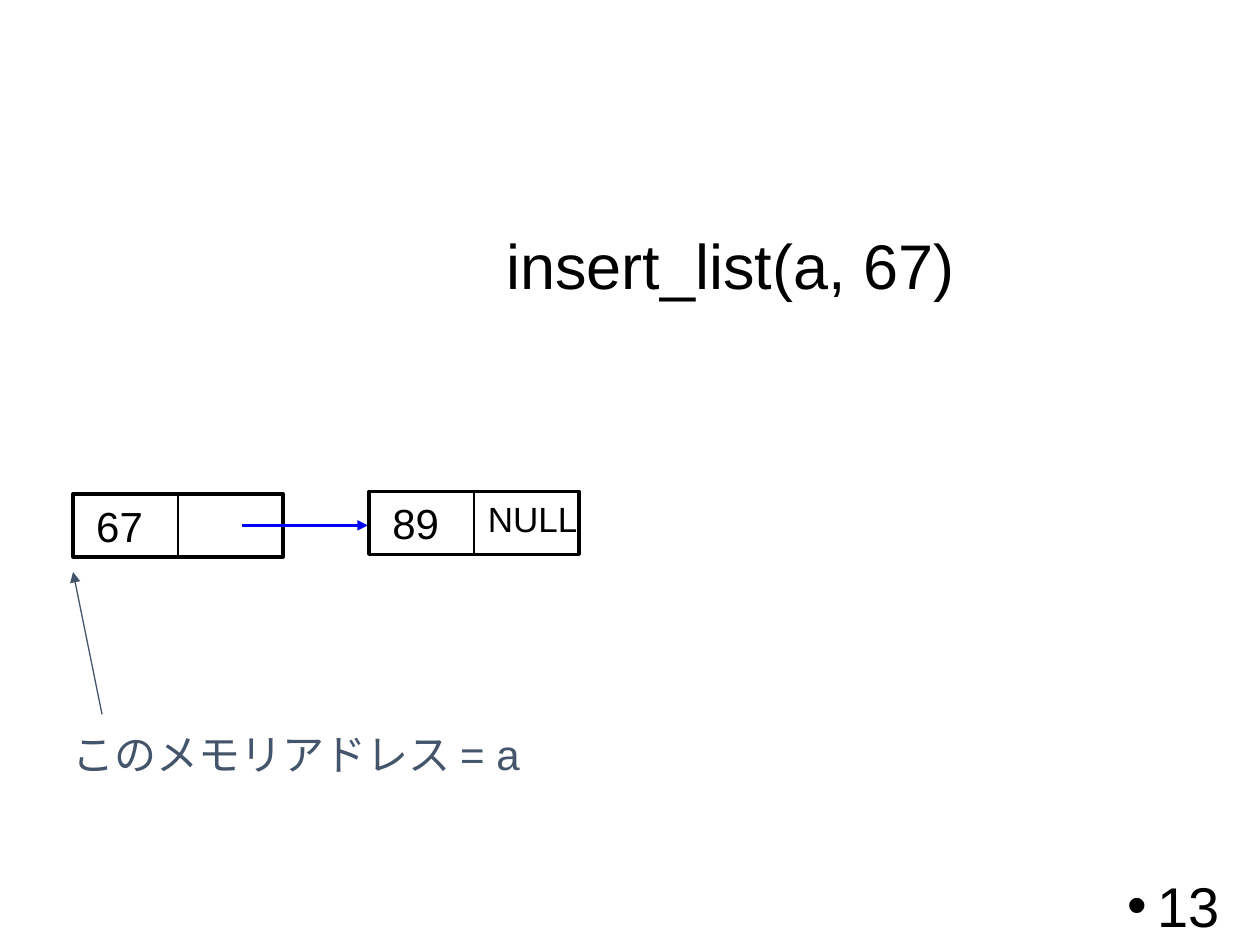
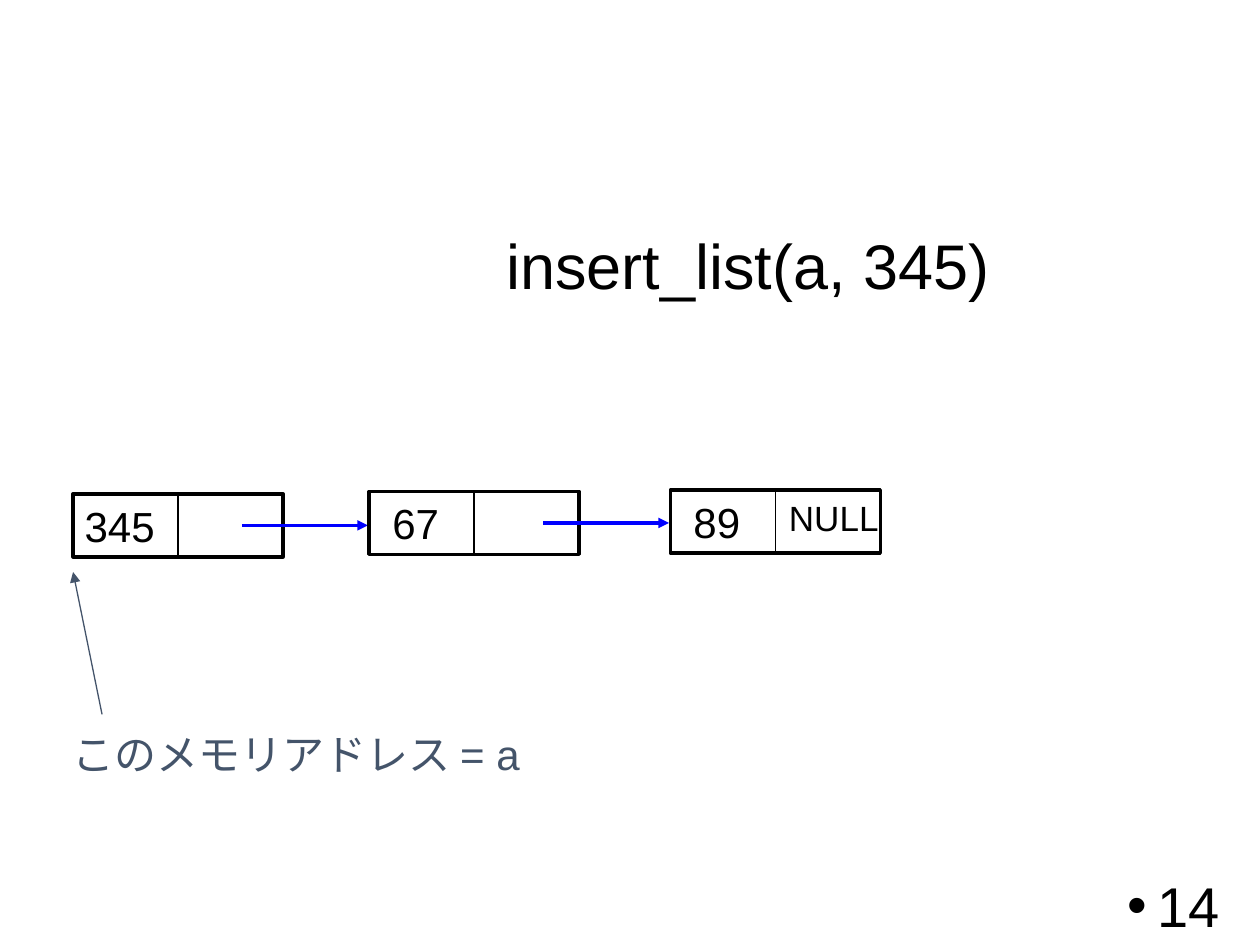
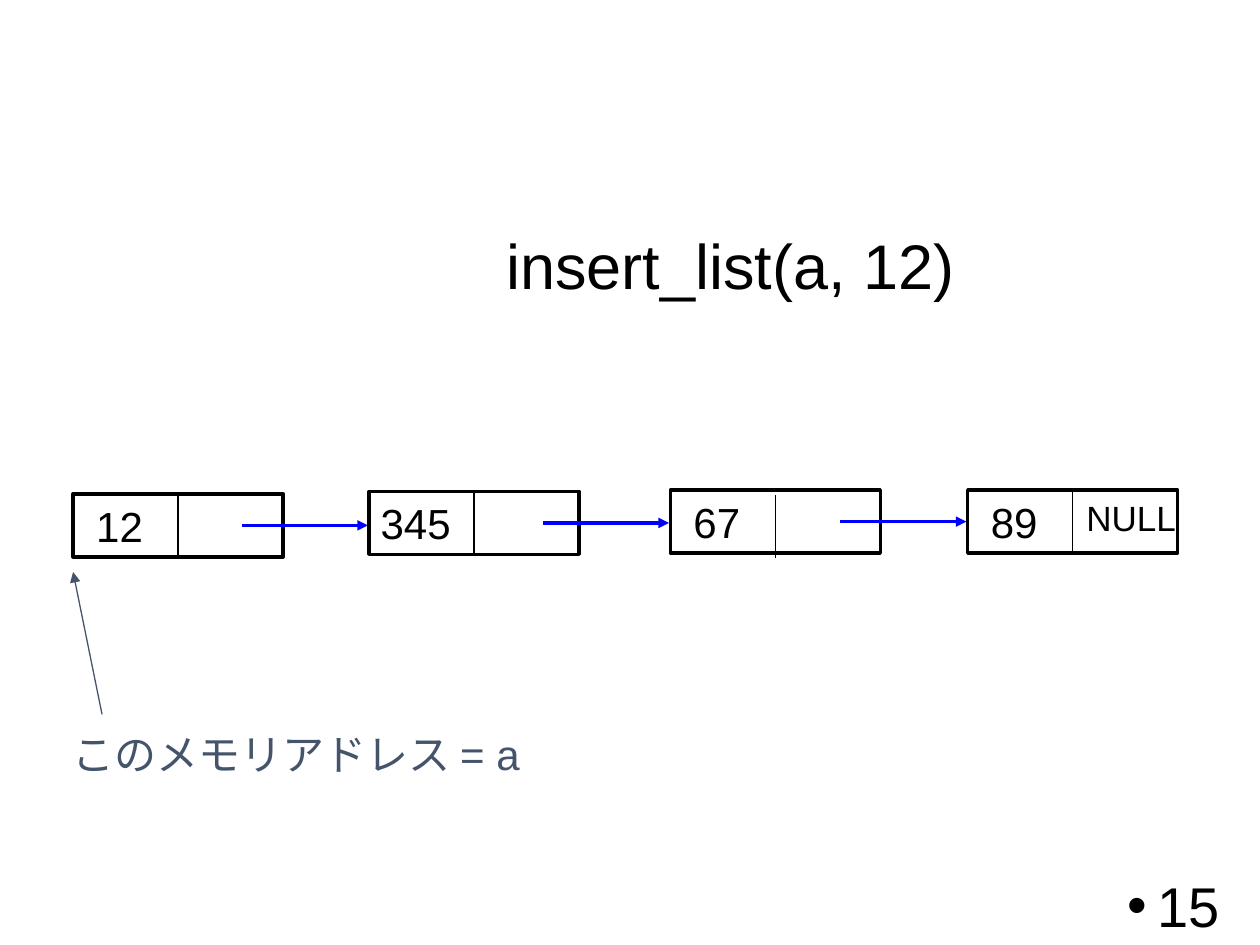
from lxml import etree
from pptx import Presentation
from pptx.dml.color import RGBColor
from pptx.enum.shapes import MSO_CONNECTOR, MSO_SHAPE
from pptx.enum.text import MSO_ANCHOR, PP_ALIGN
from pptx.oxml.ns import qn
from pptx.util import Pt

RECT = MSO_SHAPE.RECTANGLE
LINE = MSO_CONNECTOR.STRAIGHT
MIDDLE = MSO_ANCHOR.MIDDLE
CENTER, RIGHT = PP_ALIGN.CENTER, PP_ALIGN.RIGHT

FONT = "Arial"
BLACK, SLATE, BLUE = "000000", "44546A", "0000FF"

# Node places in the list, left to right
SPOTS = [(41.76, 282.24), (210.96, 280.8), (383.04, 280.08), (552.96, 280.08)]
WIDE, HIGH = 120, 36

# Page number, inserted value, title width, node values, lowered dividers
SLIDES = [
    (13, 67, 272.88, [67, 89], {}),
    (14, 345, 293.04, [345, 67, 89], {}),
    (15, 12, 272.88, [12, 345, 67, 89], {2: 2.88}),
]


def color(code):
    return RGBColor.from_string(code)


def style(para, size, code):
    for run in para.runs:
        run.font.name = FONT
        run.font.size = Pt(size)
        run.font.color.rgb = color(code)


def label(slide, x, y, w, h, text, size, code=BLACK):
    box = slide.shapes.add_textbox(Pt(x), Pt(y), Pt(w), Pt(h))
    frame = box.text_frame
    frame.word_wrap = False
    frame.text = text
    style(frame.paragraphs[0], size, code)
    return frame


def line(slide, x1, y1, x2, y2, code=BLACK, width=0.75, arrow=False):
    link = slide.shapes.add_connector(LINE, Pt(x1), Pt(y1), Pt(x2), Pt(y2))
    link.line.color.rgb = color(code)
    link.line.width = Pt(width)
    if arrow:
        tail = etree.SubElement(link.line._get_or_add_ln(), qn("a:tailEnd"))
        tail.set("type", "triangle")
    etree.SubElement(link._element.spPr, qn("a:effectLst"))


def node(slide, x, y, value, drop):
    """A list cell: value on the left, pointer field on the right."""
    cell = slide.shapes.add_shape(RECT, Pt(x), Pt(y), Pt(WIDE), Pt(HIGH))
    cell.shadow.inherit = False
    cell.fill.background()
    cell.line.color.rgb = color(BLACK)
    cell.line.width = Pt(2)
    frame = cell.text_frame
    frame.word_wrap = False
    frame.vertical_anchor = MIDDLE
    frame.margin_left = 0
    frame.margin_right = Pt(66.8)
    frame.text = str(value)
    frame.paragraphs[0].alignment = CENTER
    style(frame.paragraphs[0], 24, BLACK)
    mid = x + WIDE / 2
    line(slide, mid, y + drop, mid, y + drop + HIGH)


def chain(slide, values, drops):
    """Linked nodes, the last one ending in NULL."""
    for i, value in enumerate(values):
        x, y = SPOTS[i]
        if i:
            level = SPOTS[i - 1][1] + HIGH / 2
            line(slide, x - 72.72, level, x - 0.72, level, BLUE, 2, True)
        node(slide, x, y, value, drops.get(i, 0))
    label(slide, x + WIDE / 2 + 0.72, y, 67.68, 30.96, "NULL", 20)


def number(slide, page):
    frame = label(slide, 542.16, 500.4, 162, 28.8, str(page), 32)
    frame.word_wrap = True
    frame.vertical_anchor = MIDDLE
    frame.margin_top = Pt(8)
    para = frame.paragraphs[0]
    para.alignment = RIGHT
    props = para._p.get_or_add_pPr()
    props.set("marL", str(Pt(17)))
    props.set("indent", str(-Pt(17)))
    etree.SubElement(props, qn("a:buFont")).set("typeface", FONT)
    etree.SubElement(props, qn("a:buChar")).set("char", "•")


def main():
    deck = Presentation()
    deck.slide_width, deck.slide_height = Pt(720), Pt(540)
    for page, added, width, values, drops in SLIDES:
        slide = deck.slides.add_slide(deck.slide_layouts[6])
        number(slide, page)
        label(slide, 282.24, 126, width, 51.12, f"insert_list(a, {added})", 36)
        # Head of the list
        line(slide, 58.32, 408.24, 41.76, 326.88, SLATE, arrow=True)
        label(slide, 34.56, 412.56, 273.6, 36, "このメモリアドレス = a", 24, SLATE)
        chain(slide, values, drops)
    deck.save("out.pptx")


if __name__ == "__main__":
    main()
